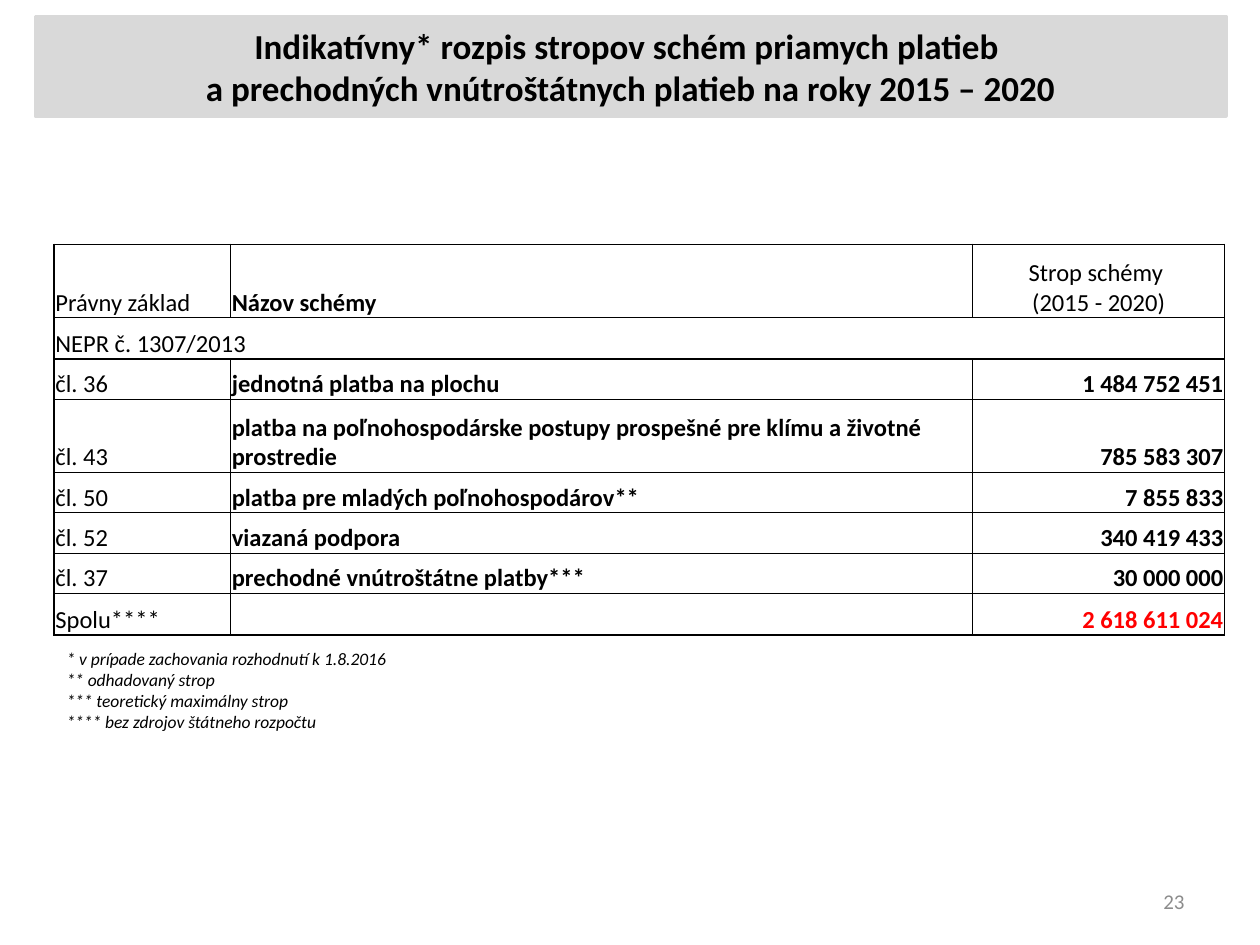
"""Build the slide listing indicative ceilings of direct payment schemes."""
from dataclasses import dataclass

from lxml import etree
from pptx import Presentation
from pptx.dml.color import RGBColor
from pptx.enum.shapes import MSO_SHAPE
from pptx.enum.text import MSO_ANCHOR, PP_ALIGN
from pptx.oxml.ns import qn
from pptx.util import Inches, Pt

RECTANGLE = MSO_SHAPE.RECTANGLE
TOP, MIDDLE, BOTTOM = MSO_ANCHOR.TOP, MSO_ANCHOR.MIDDLE, MSO_ANCHOR.BOTTOM
LEFT, CENTER, RIGHT = PP_ALIGN.LEFT, PP_ALIGN.CENTER, PP_ALIGN.RIGHT
FONT = "Calibri"
BLACK, RED, GRAY, BAND = "000000", "FF0000", "8C8C8C", "D9D9D9"
GRID_COLS, GRID_ROWS = 1000, 750
UNIT = Inches(10) // GRID_COLS
THIN, THICK = 0.5, 1
COL_WIDTHS = (140, 589, 200)
ROW_HEIGHTS = (58, 33, 32, 58, 32, 32, 32, 33)


@dataclass(frozen=True)
class Area:
    """A rectangle in grid columns and rows."""
    left: int
    top: int
    width: int
    height: int

    def box(self) -> tuple:
        """Return left, top, width and height as lengths."""
        return tuple(n * UNIT for n in (self.left, self.top, self.width, self.height))


@dataclass(frozen=True)
class Style:
    """The look of a block of text."""
    size: int
    color: str = BLACK
    bold: bool = False
    italic: bool = False
    align: PP_ALIGN = LEFT
    anchor: MSO_ANCHOR = TOP


@dataclass(frozen=True)
class Scheme:
    """One table row: legal basis, scheme name and ceiling."""
    basis: str
    name: str = ""
    ceiling: str = ""


SCHEMES = (
    Scheme("Právny základ", "Názov schémy", "Strop schémy \n(2015 - 2020)"),
    Scheme("NEPR č. 1307/2013"),
    Scheme("čl. 36", "jednotná platba na plochu", "1 484 752 451"),
    Scheme("čl. 43", "platba na poľnohospodárske postupy prospešné pre klímu a životné prostredie",
           "785 583 307"),
    Scheme("čl. 50", "platba pre mladých poľnohospodárov**", "7 855 833"),
    Scheme("čl. 52", "viazaná podpora", "340 419 433"),
    Scheme("čl. 37", "prechodné vnútroštátne platby***", "30 000 000"),
    Scheme("Spolu****", "", "2 618 611 024"),
)
REGULATION_ROW, TOTAL_ROW = 1, len(SCHEMES) - 1
TITLE = ("Indikatívny* rozpis stropov schém priamych platieb \n"
         "a prechodných vnútroštátnych platieb na roky 2015 – 2020")
NOTES = ("* v prípade zachovania rozhodnutí k 1.8.2016\n** odhadovaný strop\n"
         "*** teoretický maximálny strop\n**** bez zdrojov štátneho rozpočtu")


def rgb(color: str) -> RGBColor:
    """Turn a hex string into a colour."""
    return RGBColor.from_string(color)


def write(tf, text: str, style: Style) -> None:
    """Fill a text frame with styled paragraphs."""
    tf.text = text
    tf.word_wrap = True
    tf.vertical_anchor = style.anchor
    for p in tf.paragraphs:
        p.alignment = style.align
        p.font.name, p.font.size = FONT, Pt(style.size)
        p.font.bold, p.font.italic = style.bold, style.italic
        p.font.color.rgb = rgb(style.color)


def add_text(s, area: Area, text: str, style: Style) -> None:
    """Add a text box."""
    write(s.shapes.add_textbox(*area.box()).text_frame, text, style)


def add_title(s, area: Area, text: str, style: Style) -> None:
    """Add the title band."""
    sp = s.shapes.add_shape(RECTANGLE, *area.box())
    sp.shadow.inherit = False
    sp.fill.solid()
    sp.fill.fore_color.rgb = sp.line.color.rgb = rgb(BAND)
    sp.line.width = Pt(2)
    write(sp.text_frame, text, style)


def set_borders(cell, widths: dict) -> None:
    """Draw black cell borders, placed ahead of the cell fill."""
    props = cell._tc.get_or_add_tcPr()
    for i, (side, width) in enumerate(widths.items()):
        ln = etree.Element(qn(f"a:{side}"), w=str(Pt(width)))
        fill = etree.SubElement(ln, qn("a:solidFill"))
        etree.SubElement(fill, qn("a:srgbClr"), val=BLACK)
        props.insert(i, ln)


def border_widths(row: int, col: int) -> dict:
    """Thicken the outer frame, the regulation row's base and the basis column."""
    last = len(COL_WIDTHS) - 1
    basis_edge = THICK if row > REGULATION_ROW else THIN
    lefts, rights = (THICK, basis_edge, THIN), (basis_edge, THIN, THICK)
    return {
        "lnL": lefts[col],
        "lnR": THICK if row == REGULATION_ROW else rights[min(col, last)],
        "lnT": THICK if row in (0, REGULATION_ROW + 1) else THIN,
        "lnB": THICK if row in (REGULATION_ROW, TOTAL_ROW) else THIN,
    }


def cell_style(row: int, col: int) -> Style:
    """Choose the text style of a cell."""
    return Style(
        size=14,
        color=RED if (row, col) == (TOTAL_ROW, 2) else BLACK,
        bold=col == 1 or (col == 2 and row > 0),
        align=LEFT if col < 2 else RIGHT if row else CENTER,
        anchor=BOTTOM,
    )


def add_schemes(s, left: int, top: int) -> None:
    """Add the table of schemes."""
    area = Area(left, top, sum(COL_WIDTHS), sum(ROW_HEIGHTS))
    table = s.shapes.add_table(len(ROW_HEIGHTS), len(COL_WIDTHS), *area.box()).table
    table.first_row = table.horz_banding = False
    for column, width in zip(table.columns, COL_WIDTHS):
        column.width = width * UNIT
    for row, (scheme, height) in enumerate(zip(SCHEMES, ROW_HEIGHTS)):
        table.rows[row].height = height * UNIT
        for col, text in enumerate((scheme.basis, scheme.name, scheme.ceiling)):
            cell, style = table.cell(row, col), cell_style(row, col)
            write(cell.text_frame, text, style)
            cell.vertical_anchor = style.anchor
            cell.margin_left = cell.margin_right = cell.margin_top = UNIT
            cell.margin_bottom = 0
            cell.fill.background()
            set_borders(cell, border_widths(row, col))
    table.cell(REGULATION_ROW, 0).merge(table.cell(REGULATION_ROW, len(COL_WIDTHS) - 1))


def main() -> None:
    """Build and save the presentation."""
    prs = Presentation()
    prs.slide_width, prs.slide_height = GRID_COLS * UNIT, GRID_ROWS * UNIT
    s = prs.slides.add_slide(prs.slide_layouts[6])
    add_title(s, Area(28, 13, 945, 79), TITLE,
              Style(20, bold=True, align=CENTER, anchor=MIDDLE))
    add_schemes(s, 43, 194)
    add_text(s, Area(43, 509, 283, 77), NOTES, Style(10, italic=True))
    add_text(s, Area(717, 695, 233, 40), "23", Style(12, GRAY, align=RIGHT, anchor=MIDDLE))
    prs.save("out.pptx")


if __name__ == "__main__":
    main()
